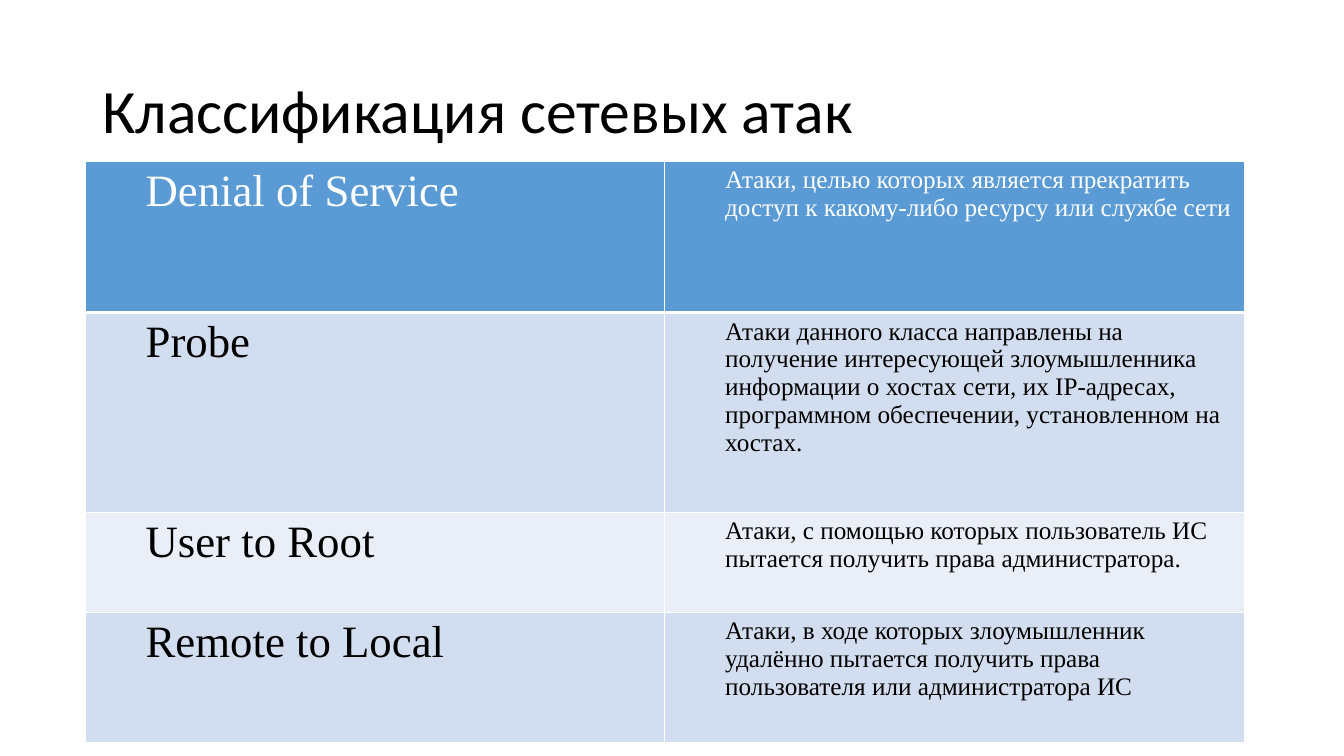
import pptx
import pptx.dml.color
import pptx.enum.text
import pptx.oxml
import pptx.oxml.ns
import pptx.util

Pt = pptx.util.Pt

ATTACKS = [
    ("Denial of Service",
     "Атаки, целью которых является прекратить доступ к какому-либо ресурсу или службе сети"),
    ("Probe",
     "Атаки данного класса направлены на получение интересующей злоумышленника информации "
     "о хостах сети, их IP-адресах, программном обеспечении, установленном на хостах."),
    ("User to Root",
     "Атаки, с помощью которых пользователь ИС пытается получить права администратора."),
    ("Remote to Local",
     "Атаки, в ходе которых злоумышленник удалённо пытается получить права пользователя "
     "или администратора ИС"),
]
ROW_HEIGHTS = [108, 142.7, 71.5, 93]
COLUMN_WIDTH = 414
HEADER_FILL = "5B9BD5"
BAND_FILLS = ["EAEFF7", "D2DEEF"]
WHITE = "FFFFFF"
BLACK = "000000"


def color(value):
    return pptx.dml.color.RGBColor.from_string(value)


def apply_format(target, values):
    for name, value in values.items():
        setattr(target, name, value)


def write_text(paragraph, text, font_name, size, text_color):
    run = paragraph.add_run()
    run.text = text
    apply_format(run.font, {"name": font_name, "size": Pt(size), "bold": False})
    run.font.color.rgb = color(text_color)


def add_title(slide, text):
    shape = slide.shapes.add_textbox(Pt(66), Pt(28.75), Pt(828), Pt(104.4))
    apply_format(shape.text_frame, {
        "word_wrap": True,
        "vertical_anchor": pptx.enum.text.MSO_ANCHOR.MIDDLE,
    })
    paragraph = shape.text_frame.paragraphs[0]
    paragraph.line_spacing = 0.9
    write_text(paragraph, text, "Calibri", 44, BLACK)


def set_borders(cell, widths):
    properties = cell._tc.get_or_add_tcPr()
    namespace = pptx.oxml.ns.nsdecls("a")
    for index, (side, width) in enumerate(widths.items()):
        line = pptx.oxml.parse_xml(
            f'<a:{side} {namespace} w="{Pt(width)}"><a:solidFill>'
            f'<a:srgbClr val="{WHITE}"/></a:solidFill></a:{side}>')
        properties.insert(index, line)


def fill_cell(cell, text, size, text_color, fill_color, widths):
    cell.fill.solid()
    cell.fill.fore_color.rgb = color(fill_color)
    set_borders(cell, widths)
    paragraph = cell.text_frame.paragraphs[0]
    properties = paragraph._p.get_or_add_pPr()
    properties.set("marL", str(Pt(36)))
    properties.set("indent", "0")
    write_text(paragraph, text, "Times New Roman", size, text_color)


def add_attack_table(slide):
    shape = slide.shapes.add_table(
        len(ATTACKS), 2, Pt(60.8), Pt(115.2), Pt(2 * COLUMN_WIDTH), Pt(sum(ROW_HEIGHTS)))
    table = shape.table
    for column in table.columns:
        column.width = Pt(COLUMN_WIDTH)
    for row_index, (texts, height) in enumerate(zip(ATTACKS, ROW_HEIGHTS)):
        table.rows[row_index].height = Pt(height)
        header = row_index == 0
        fill_color = HEADER_FILL if header else BAND_FILLS[row_index % 2]
        text_color = WHITE if header else BLACK
        widths = {"lnL": 1, "lnR": 1, "lnT": 3 if row_index == 1 else 1, "lnB": 3 if header else 1}
        for column_index, (text, size) in enumerate(zip(texts, (32, 18))):
            fill_cell(table.cell(row_index, column_index), text, size, text_color, fill_color, widths)


def main():
    presentation = pptx.Presentation()
    apply_format(presentation, {"slide_width": Pt(960), "slide_height": Pt(540)})
    slide = presentation.slides.add_slide(presentation.slide_layouts[6])
    add_title(slide, "Классификация сетевых атак")
    add_attack_table(slide)
    presentation.save("out.pptx")


if __name__ == "__main__":
    main()
